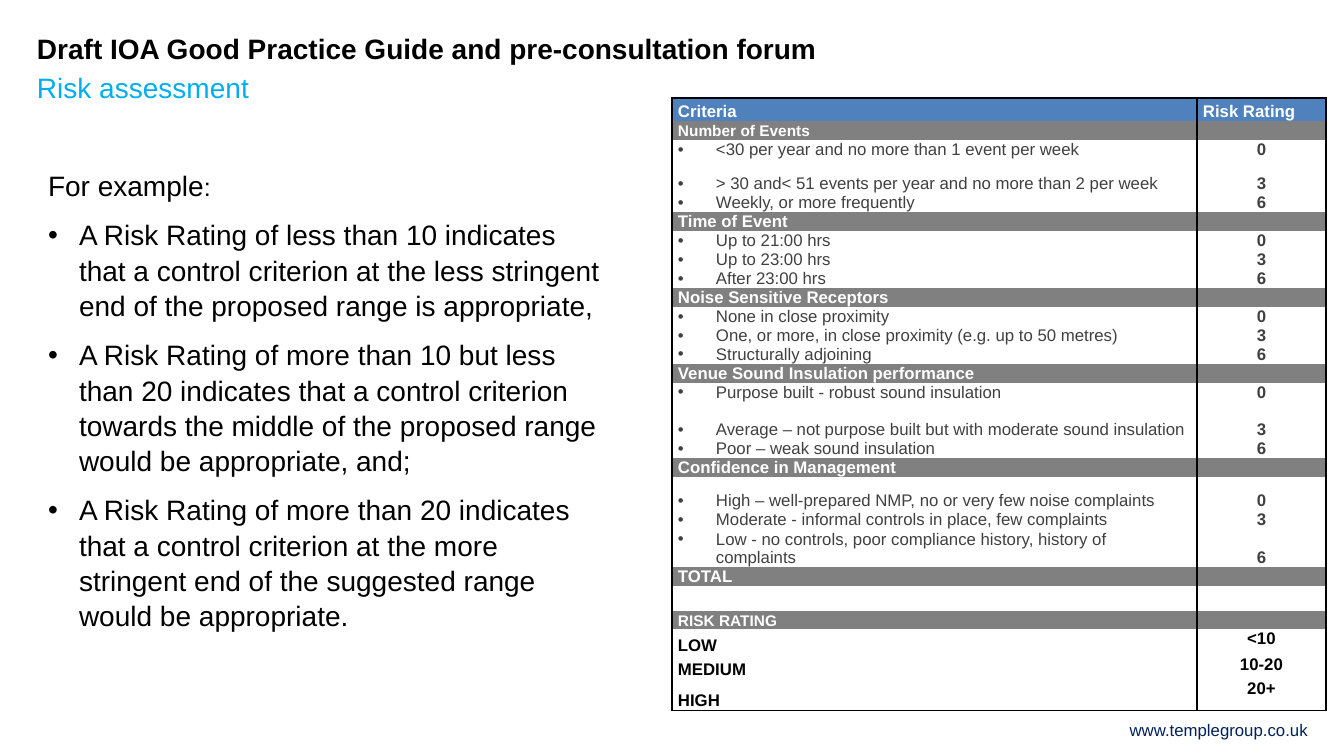
"""Build the risk assessment slide: title, guidance bullets and rating table."""
from dataclasses import dataclass
from enum import Enum

from lxml.etree import SubElement
from pptx import Presentation
from pptx.dml.color import RGBColor
from pptx.enum.text import MSO_ANCHOR, MSO_AUTO_SIZE, PP_ALIGN
from pptx.oxml.ns import qn
from pptx.util import Emu, Pt

EMU_PER_PX = 914400 / 100.8
FONT = "Arial"
COLOURS = {
    "black": "000000",
    "white": "FFFFFF",
    "heading": "4F81BD",
    "section": "808080",
    "criterion": "404040",
    "subtitle": "00AEEF",
    "footer": "002159",
}
COLUMN_WIDTHS = (525, 129)


class Kind(Enum):
    HEADING = "heading"
    SECTION = "section"
    CRITERION = "criterion"
    BLANK = "blank"
    BAND = "band"


@dataclass(frozen=True)
class Area:
    left: int
    top: int
    width: int
    height: int


@dataclass(frozen=True)
class Style:
    size: int
    colour: str
    bold: bool = False
    align: PP_ALIGN = PP_ALIGN.LEFT


@dataclass(frozen=True)
class Row:
    kind: Kind
    label: str = ""
    rating: str = ""
    height: int = 19
    size: int = 12


@dataclass(frozen=True)
class Label:
    text: str
    area: Area
    style: Style


LABELS = (
    Label("Risk assessment", Area(37, 71, 1055, 40), Style(20, "subtitle")),
    Label("www.templegroup.co.uk", Area(995, 720, 313, 20), Style(12, "footer", align=PP_ALIGN.RIGHT)),
)
GUIDANCE = (
    "A Risk Rating of less than 10 indicates that a control criterion at the less stringent end of the "
    "proposed range is appropriate,",
    "A Risk Rating of more than 10 but less than 20 indicates that a control criterion towards the middle "
    "of the proposed range would be appropriate, and;",
    "A Risk Rating of more than 20 indicates that a control criterion at the more stringent end of the "
    "suggested range would be appropriate.",
)
ROWS = (
    Row(Kind.HEADING, "Criteria", "Risk Rating", 23),
    Row(Kind.SECTION, "Number of Events", size=11),
    Row(Kind.CRITERION, "<30 per year and no more than 1 event per week", "0"),
    Row(Kind.CRITERION, "> 30 and< 51 events per year and no more than 2 per week", "3", 34),
    Row(Kind.CRITERION, "Weekly, or more frequently", "6"),
    Row(Kind.SECTION, "Time of Event"),
    Row(Kind.CRITERION, "Up to 21:00 hrs", "0"),
    Row(Kind.CRITERION, "Up to 23:00 hrs", "3"),
    Row(Kind.CRITERION, "After 23:00 hrs", "6"),
    Row(Kind.SECTION, "Noise Sensitive Receptors"),
    Row(Kind.CRITERION, "None in close proximity", "0"),
    Row(Kind.CRITERION, "One, or more, in close proximity (e.g. up to 50 metres)", "3"),
    Row(Kind.CRITERION, "Structurally adjoining", "6"),
    Row(Kind.SECTION, "Venue Sound Insulation performance"),
    Row(Kind.CRITERION, "Purpose built - robust sound insulation", "0"),
    Row(Kind.CRITERION, "Average – not purpose built but with moderate sound insulation", "3", 38),
    Row(Kind.CRITERION, "Poor – weak sound insulation", "6"),
    Row(Kind.SECTION, "Confidence in Management"),
    Row(Kind.CRITERION, "High – well-prepared NMP, no or very few noise complaints", "0", 33),
    Row(Kind.CRITERION, "Moderate - informal controls in place, few complaints", "3"),
    Row(Kind.CRITERION, "Low - no controls, poor compliance history, history of complaints", "6", 38),
    Row(Kind.SECTION, "TOTAL"),
    Row(Kind.BLANK, height=25),
    Row(Kind.SECTION, "RISK RATING", height=18, size=11),
    Row(Kind.BAND, "LOW", "<10", 26),
    Row(Kind.BAND, "MEDIUM", "10-20", 24),
    Row(Kind.BAND, "HIGH", "20+", 31),
)


def px(length: int) -> Emu:
    """Turn a length in px into EMU."""
    return Emu(round(length * EMU_PER_PX))


def place(area: Area) -> tuple[Emu, ...]:
    """Return left, top, width and height of an area in EMU."""
    return px(area.left), px(area.top), px(area.width), px(area.height)


def style_paragraph(para, style: Style) -> None:
    """Set the alignment and font of a paragraph."""
    para.alignment = style.align
    para.font.name = FONT
    para.font.size = Pt(style.size)
    para.font.bold = style.bold
    para.font.color.rgb = RGBColor.from_string(COLOURS[style.colour])


def add_bullet(para, indent: int) -> None:
    """Give a paragraph a round bullet with a hanging indent."""
    properties = para._p.get_or_add_pPr()
    properties.set("marL", str(px(indent)))
    properties.set("indent", str(-px(indent)))
    SubElement(properties, qn("a:buFont"), typeface=FONT)
    SubElement(properties, qn("a:buChar"), char="•")


def prepare_frame(frame) -> None:
    """Make a text frame wrap, without margins or resizing."""
    frame.word_wrap = True
    frame.auto_size = MSO_AUTO_SIZE.NONE
    frame.vertical_anchor = MSO_ANCHOR.TOP
    frame.margin_left = frame.margin_right = frame.margin_top = frame.margin_bottom = 0


def add_text_box(page, area: Area):
    """Add an empty text box and return its text frame."""
    frame = page.shapes.add_textbox(*place(area)).text_frame
    prepare_frame(frame)
    return frame


def add_title(page, text: str, area: Area) -> None:
    """Fill, move and format the title placeholder."""
    title = page.shapes.title
    title.left, title.top, title.width, title.height = place(area)
    prepare_frame(title.text_frame)
    title.text_frame.text = text
    style_paragraph(title.text_frame.paragraphs[0], Style(20, "black", bold=True))


def add_guidance(page, area: Area) -> None:
    """Add the introduction and the bulleted guidance."""
    frame = add_text_box(page, area)
    intro = frame.paragraphs[0]
    intro.add_run().text = "For example"
    colon = intro.add_run()
    colon.text = ":"
    colon.font.size = Pt(18)
    for text in GUIDANCE:
        para = frame.add_paragraph()
        para.text = text
        para.space_before = Pt(10)
        add_bullet(para, 31)
    for para in frame.paragraphs:
        para.line_spacing = 1.05
        style_paragraph(para, Style(20, "black"))


def set_borders(cell, sides: str) -> None:
    """Draw black lines on the named sides (L, R, T, B) and none elsewhere."""
    properties = cell._tc.get_or_add_tcPr()
    for side in "LRTB":
        line = SubElement(properties, qn(f"a:ln{side}"), w=str(Pt(1)))
        if side in sides:
            fill = SubElement(line, qn("a:solidFill"))
            SubElement(fill, qn("a:srgbClr"), val=COLOURS["black"])
        else:
            SubElement(line, qn("a:noFill"))


def fill_cell(cell, row: Row, is_rating: bool, sides: str) -> None:
    """Write and format one cell of the rating table."""
    set_borders(cell, sides)
    is_filled = row.kind in (Kind.HEADING, Kind.SECTION)
    is_criterion = row.kind is Kind.CRITERION
    if is_filled:
        cell.fill.solid()
        cell.fill.fore_color.rgb = RGBColor.from_string(COLOURS[row.kind.value])
    else:
        cell.fill.background()
    cell.margin_left = cell.margin_right = px(6)
    cell.margin_top = cell.margin_bottom = 0
    cell.vertical_anchor = MSO_ANCHOR.TOP if is_rating and row.kind is Kind.BAND else MSO_ANCHOR.BOTTOM
    para = cell.text_frame.paragraphs[0]
    text = row.rating if is_rating else row.label
    if text:
        para.text = text
    else:
        SubElement(para._p, qn("a:endParaRPr"), sz=str(row.size * 100))
    if is_criterion and not is_rating:
        add_bullet(para, 38)
    colour = "white" if is_filled else "criterion" if is_criterion else "black"
    align = PP_ALIGN.CENTER if is_rating and not is_filled else PP_ALIGN.LEFT
    style_paragraph(para, Style(row.size, colour, is_rating or not is_criterion, align))


def add_rating_table(page, left: int, top: int) -> None:
    """Add the table of criteria and risk ratings."""
    area = Area(left, top, sum(COLUMN_WIDTHS), sum(row.height for row in ROWS))
    table = page.shapes.add_table(len(ROWS), len(COLUMN_WIDTHS), *place(area)).table
    table.first_row = table.horz_banding = False
    for column, width in zip(table.columns, COLUMN_WIDTHS):
        column.width = px(width)
    for index, row in enumerate(ROWS):
        table.rows[index].height = px(row.height)
        sides = "LR" + ("T" if row is ROWS[0] else "") + ("B" if row is ROWS[-1] else "")
        for number in range(len(COLUMN_WIDTHS)):
            fill_cell(table.cell(index, number), row, number == 1, sides)


def main() -> None:
    """Build and save the deck."""
    deck = Presentation()
    deck.slide_width, deck.slide_height = px(1344), px(756)
    page = deck.slides.add_slide(deck.slide_layouts[5])
    add_title(page, "Draft IOA Good Practice Guide and pre-consultation forum", Area(37, 31, 1055, 34))
    for label in LABELS:
        para = add_text_box(page, label.area).paragraphs[0]
        para.text = label.text
        style_paragraph(para, label.style)
    add_guidance(page, Area(48, 167, 560, 549))
    add_rating_table(page, 672, 98)
    deck.save("out.pptx")


if __name__ == "__main__":
    main()
